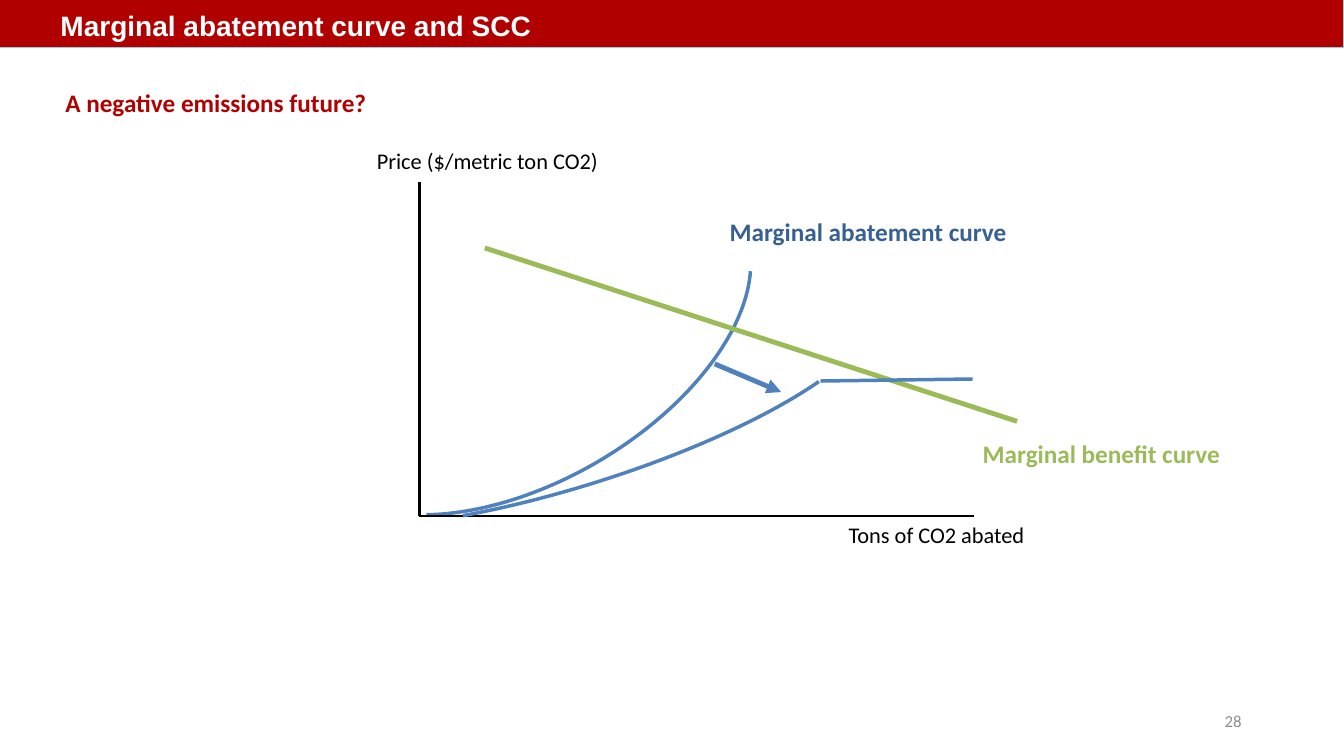
from dataclasses import dataclass

from lxml.etree import SubElement
from pptx import Presentation
from pptx.dml.color import RGBColor
from pptx.enum.shapes import MSO_CONNECTOR, MSO_SHAPE
from pptx.enum.text import MSO_ANCHOR, PP_ALIGN
from pptx.oxml.ns import qn
from pptx.util import Inches, Pt


@dataclass(frozen=True)
class Theme:
    red: str = "B00000"
    sky: str = "93CDDD"
    white: str = "FFFFFF"
    black: str = "000000"
    gray: str = "8C8C8C"
    blue: str = "4F81BD"
    navy: str = "376092"
    green: str = "9BBB59"
    heading_font: str = "Arial"
    body_font: str = "Calibri"
    title: int = 20
    label: int = 18
    axis: int = 16
    small: int = 12
    axis_line: float = 2
    curve_line: float = 2.5
    bold_line: float = 3.5


class SlideBuilder:
    COLS, ROWS = 160, 90

    def __init__(self, prs, theme):
        self.theme = theme
        self.col = prs.slide_width / self.COLS
        self.row = prs.slide_height / self.ROWS
        self.shapes = prs.slides.add_slide(prs.slide_layouts[6]).shapes

    def place(self, x, y, w, h):
        return (round(x * self.col), round(y * self.row),
                round(w * self.col), round(h * self.row))

    def stroke(self, sp, color, width):
        sp.line.color.rgb = RGBColor.from_string(color)
        sp.line.width = Pt(width)

    def add_run(self, tf, text, size, color, bold=False, font=None, align=PP_ALIGN.LEFT):
        p = tf.paragraphs[0]
        p.alignment = align
        r = p.add_run()
        r.text = text
        r.font.name = font or self.theme.body_font
        r.font.size = Pt(size)
        r.font.bold = bold
        r.font.color.rgb = RGBColor.from_string(color)

    def banner(self, text, height, indent):
        t = self.theme
        sp = self.shapes.add_shape(MSO_SHAPE.RECTANGLE, *self.place(0, 0, self.COLS, height))
        sp.shadow.inherit = False
        sp.fill.solid()
        sp.fill.fore_color.rgb = RGBColor.from_string(t.red)
        self.stroke(sp, t.sky, 0)
        tf = sp.text_frame
        tf.vertical_anchor = MSO_ANCHOR.BOTTOM
        tf.margin_left = round(indent * self.col)
        self.add_run(tf, text, t.title, t.white, True, t.heading_font)

    def text(self, box, text, size, color, bold=False, align=PP_ALIGN.LEFT,
             anchor=MSO_ANCHOR.TOP, wrap=True):
        tf = self.shapes.add_textbox(*self.place(*box)).text_frame
        tf.word_wrap = wrap
        tf.vertical_anchor = anchor
        self.add_run(tf, text, size, color, bold, align=align)

    def arc(self, box, rotation):
        sp = self.shapes.add_shape(MSO_SHAPE.ARC, *self.place(*box))
        sp.shadow.inherit = False
        sp.adjustments[0] = 7.213
        sp.adjustments[1] = 90.6
        sp.rotation = rotation
        sp.fill.background()
        self.stroke(sp, self.theme.blue, self.theme.curve_line)

    def line(self, start, end, color, width, arrow=False):
        sp = self.shapes.add_connector(MSO_CONNECTOR.STRAIGHT, *self.place(*start, *end))
        self.stroke(sp, color, width)
        sp_pr = sp._element.spPr
        if arrow:
            SubElement(sp_pr.find(qn("a:ln")), qn("a:tailEnd"), type="triangle")
        SubElement(sp_pr, qn("a:effectLst"))


def main():
    prs = Presentation()
    prs.slide_width, prs.slide_height = Inches(13.33), Inches(7.5)
    t = Theme()
    s = SlideBuilder(prs, t)

    s.banner("Marginal abatement curve and SCC", 5.64, 7.2)
    s.text((113, 83.4, 36, 4.8), "28", t.small, t.gray,
           align=PP_ALIGN.RIGHT, anchor=MSO_ANCHOR.MIDDLE)

    s.arc((33.72, 24.72, 58.32, 32.52), 329.8)
    s.text((85.68, 25.2, 46.44, 4.8), "Marginal abatement curve", t.label, t.navy, True)

    origin = (49.92, 61.44)
    for end in ((origin[0], 21.72), (116, origin[1])):
        s.line(origin, end, t.black, t.axis_line)
    for x, y, name in ((99.84, origin[1], "Tons of CO2 abated"),
                       (43.68, 16.92, "Price ($/metric ton CO2)")):
        s.text((x, y, 36.36, 4.44), name, t.axis, t.black)

    s.text((6.6, 9.84, 38.52, 4.8), "A negative emissions future?",
           t.label, t.red, True, wrap=False)
    s.line((57.72, 29.52), (121.08, 50.16), t.green, t.bold_line)
    s.arc((29.88, 38.4, 75.72, 19.56), 342.7)
    s.line((115.8, 45.12), (97.68, 45.36), t.blue, t.curve_line)
    s.text((115.8, 51.6, 44, 4.8), "Marginal benefit curve", t.label, t.green, True)
    s.line((85.08, 43.32), (93, 46.68), t.blue, t.bold_line, arrow=True)

    prs.save("out.pptx")


if __name__ == "__main__":
    main()
